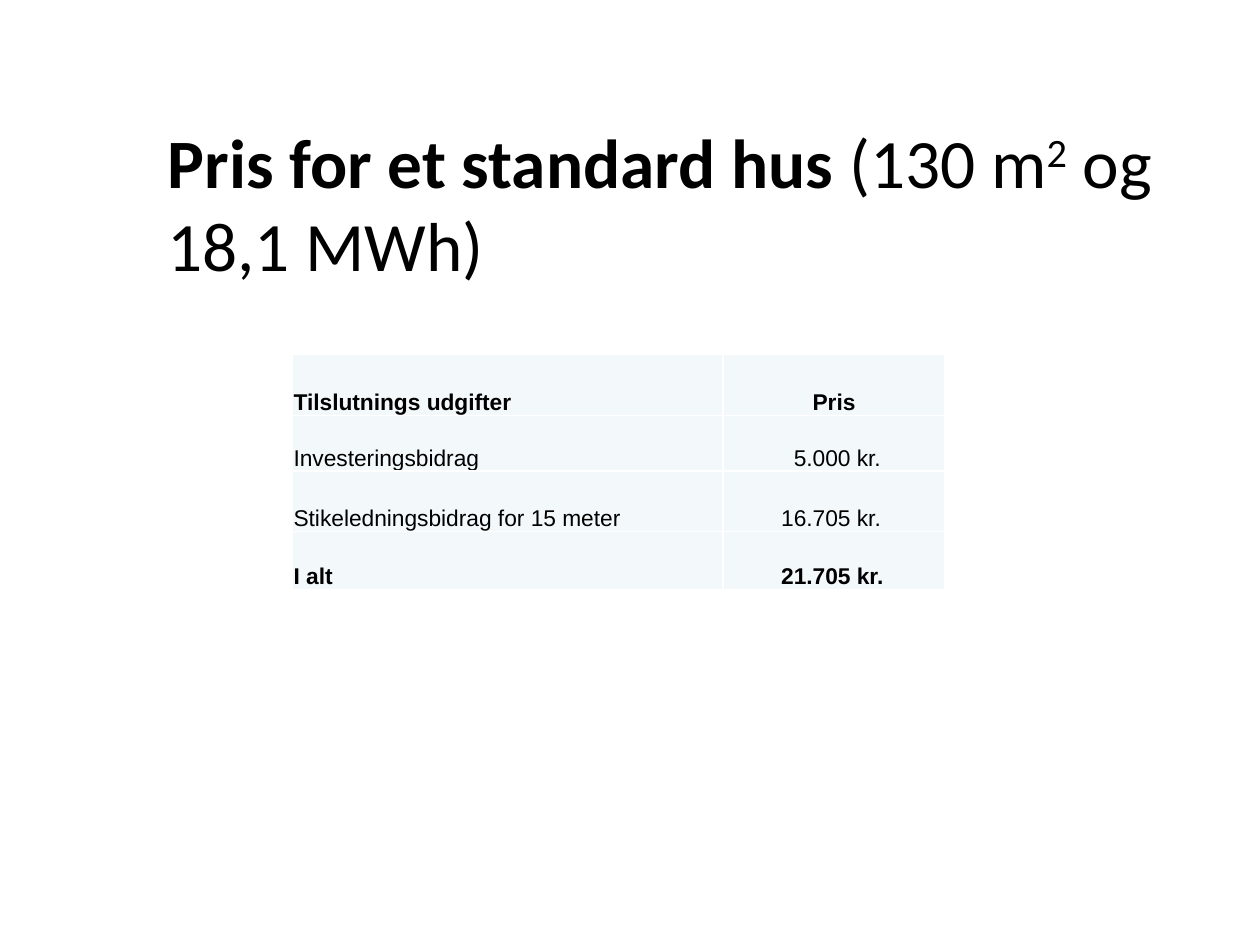
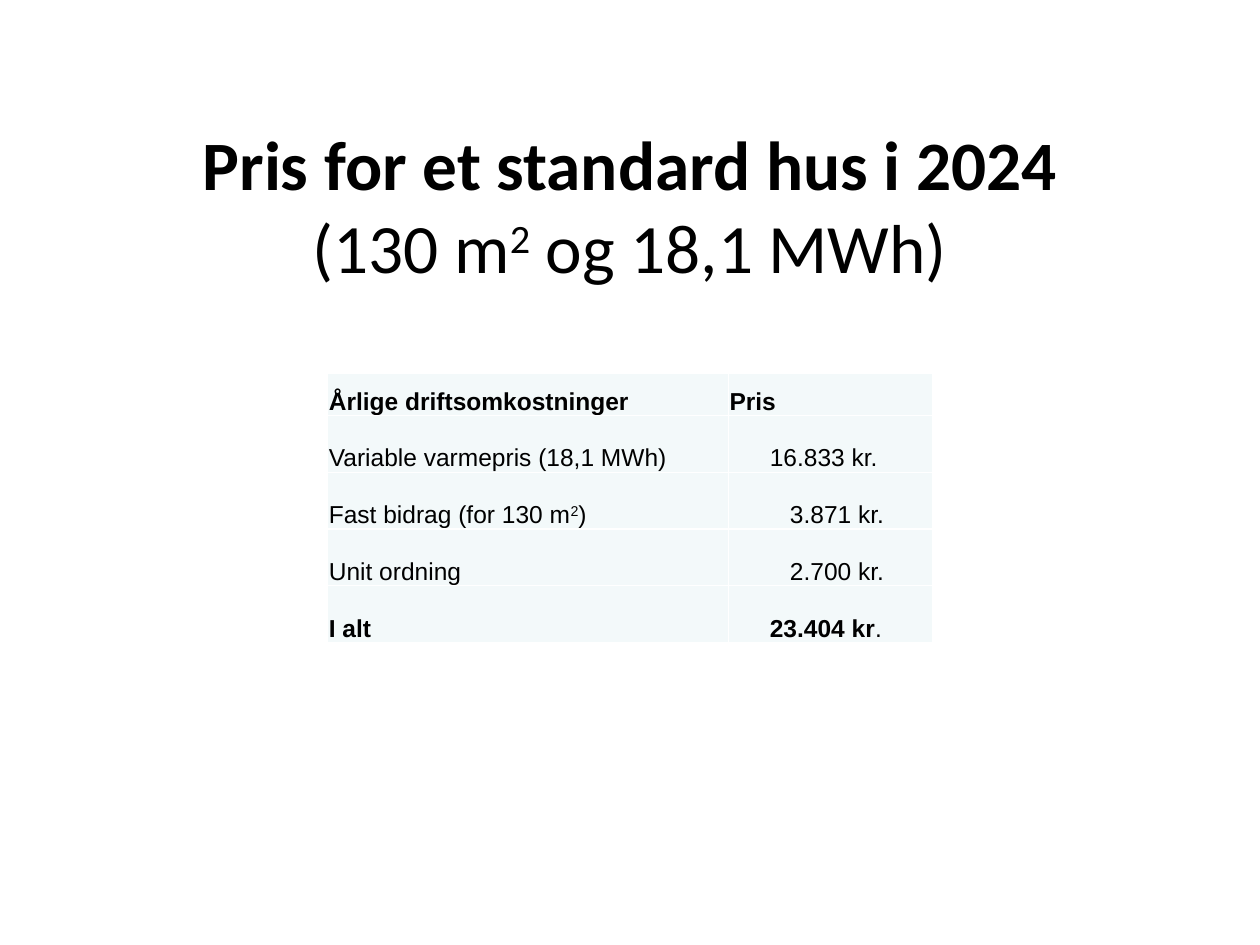
"""Builds two slides with the connection price and yearly heating cost of a standard house."""
from dataclasses import dataclass

from lxml.etree import SubElement
from pptx import Presentation
from pptx.dml.color import RGBColor
from pptx.enum.text import MSO_ANCHOR, MSO_AUTO_SIZE, PP_ALIGN
from pptx.oxml.ns import qn
from pptx.util import Inches, Pt


@dataclass(frozen=True)
class Theme:
    ink: str = "000000"
    cell: str = "F3F9FA"
    border: str = "FFFFFF"
    title_font: str = "Calibri"
    table_font: str = "Arial"
    title_size: float = 39.6


T = Theme()
LEFT, CENTER = PP_ALIGN.LEFT, PP_ALIGN.CENTER
AREA = [("(130 m", ""), ("2", "^"), (" og 18,1 MWh)", "")]


def write(p, parts, font, size):
    """Adds (text, style) runs; style b is bold, ^ is superscript and / is a line break."""
    for text, style in parts:
        if style == "/":
            p.add_line_break()
            SubElement(p._p[-1], qn("a:rPr"), sz=str(round(size * 100)))
            continue
        r = p.add_run()
        r.text = text
        r.font.name, r.font.size = font, Pt(size)
        r.font.bold = style == "b"
        r.font.color.rgb = RGBColor.from_string(T.ink)
        if style == "^":
            r._r.get_or_add_rPr().set("baseline", "30000")


def add_borders(cell):
    """Draws a thin line on all four sides of a cell."""
    tcPr = cell._tc.get_or_add_tcPr()
    for i, side in enumerate(("lnL", "lnR", "lnT", "lnB")):
        ln = tcPr.makeelement(qn(f"a:{side}"), {"w": str(Pt(1))})
        fill = SubElement(ln, qn("a:solidFill"))
        SubElement(fill, qn("a:srgbClr"), val=T.border)
        tcPr.insert(i, ln)


SLIDES = [
    dict(
        title=[("Pris for et standard hus ", "b"), *AREA],
        title_at=(12.3, 16.13), align=LEFT,
        table_at=(23.2, 37.47), cols=(34.2, 17.6), heights=(6.53, 5.87, 6.4, 6.13),
        size=13, header_align=CENTER, body_spacing=1.5,
        rows=[
            ([("Tilslutnings udgifter", "b")], [("Pris", "b")], 0),
            ([("Investeringsbidrag", "")], [("5.000 kr.", "")], 5.5),
            ([("Stikeledningsbidrag for 15 meter", "")], [("16.705 kr.", "")], 4.5),
            ([("I alt", "b")], [("21.705 kr.", "b")], 4.5),
        ],
    ),
    dict(
        title=[("Pris for et standard hus i 2024", "b"), ("", "/"), *AREA],
        title_at=(5.2, 16.4), align=CENTER,
        table_at=(26, 39.47), cols=(31.8, 16.2), heights=(4.4, 6, 6, 6, 6),
        size=14, header_align=LEFT, body_spacing=1,
        rows=[
            ([("Årlige driftsomkostninger", "b")], [("Pris", "b")], 0),
            ([("Variable varmepris (18,1 MWh)", "")], [("16.833 kr.", "")], 3.2),
            ([("Fast bidrag (for 130 m", ""), ("2", "^"), (")", "")], [("3.871 kr.", "")], 4.8),
            ([("Unit ordning", "")], [("2.700 kr.", "")], 4.8),
            ([("I alt", "b")], [("23.404 kr", "b"), (".", "")], 3.2),
        ],
    ),
]

prs = Presentation()
prs.slide_width, prs.slide_height = Inches(10), Inches(7.5)
W, H = prs.slide_width / 100, prs.slide_height / 100

for page in SLIDES:
    s = prs.slides.add_slide(prs.slide_layouts[5])

    title = s.shapes.title
    x, y = page["title_at"]
    title.left, title.top = round(x * W), round(y * H)
    title.width, title.height = round(89.6 * W), round(10.5 * H)
    tf = title.text_frame
    tf.auto_size = MSO_AUTO_SIZE.NONE
    tf.word_wrap = True
    tf.vertical_anchor = MSO_ANCHOR.MIDDLE
    tf.paragraphs[0].alignment = page["align"]
    write(tf.paragraphs[0], page["title"], T.title_font, T.title_size)

    x, y = page["table_at"]
    table = s.shapes.add_table(
        len(page["rows"]), len(page["cols"]), round(x * W), round(y * H),
        round(sum(page["cols"]) * W), round(sum(page["heights"]) * H),
    ).table
    table.first_row = table.horz_banding = False
    for col, width in zip(table.columns, page["cols"]):
        col.width = round(width * W)
    for row, height in zip(table.rows, page["heights"]):
        row.height = round(height * H)

    for i, (label, price, indent) in enumerate(page["rows"]):
        for j, parts in enumerate((label, price)):
            cell = table.cell(i, j)
            cell.fill.solid()
            cell.fill.fore_color.rgb = RGBColor.from_string(T.cell)
            cell.vertical_anchor = MSO_ANCHOR.BOTTOM
            cell.margin_left = cell.margin_right = cell.margin_top = Inches(0.01)
            cell.margin_bottom = 0
            add_borders(cell)
            p = cell.text_frame.paragraphs[0]
            p.line_spacing = page["body_spacing"] if i else 1.5
            p.alignment = page["header_align"] if (i, j) == (0, 1) else LEFT
            if j and indent:
                p._p.get_or_add_pPr().set("marL", str(round(indent * W)))
            write(p, parts, T.table_font, page["size"])

prs.save("out.pptx")
